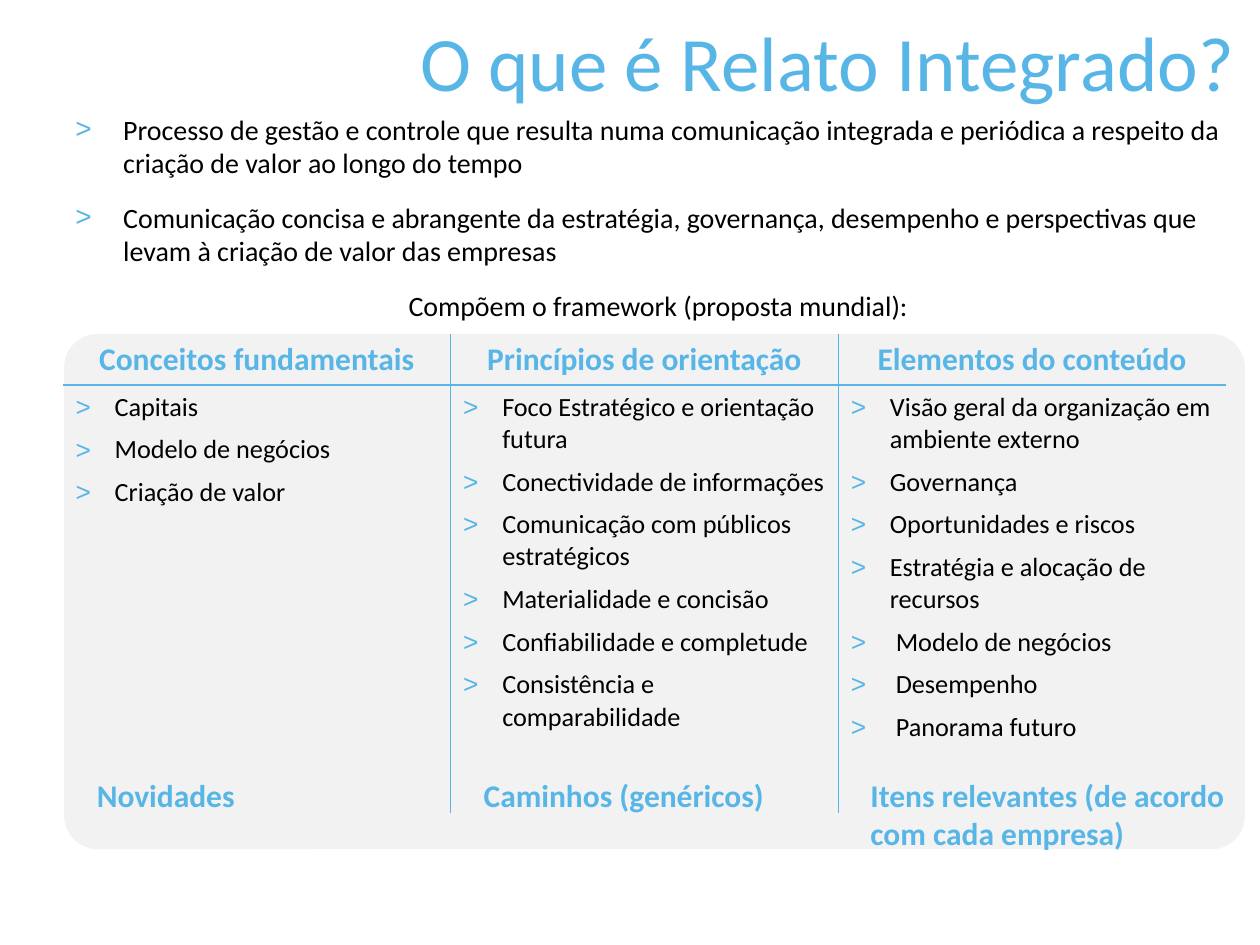
from lxml import etree
from pptx import Presentation
from pptx.dml.color import RGBColor
from pptx.enum import shapes, text
from pptx.oxml.ns import qn
from pptx.util import Inches, Pt

BLUE = RGBColor(0x58, 0xB6, 0xE7)
BLACK = RGBColor(0, 0, 0)
GREY = RGBColor(0xF2, 0xF2, 0xF2)
FONT = "Calibri"
NO_STYLE = "{2D5ABB26-0587-4C30-8999-92F81FD0307C}"

INTRO = [
    "Processo de gestão e controle que resulta numa comunicação integrada "
    "e periódica a respeito da criação de valor ao longo do tempo",
    "Comunicação concisa e abrangente da estratégia, governança, desempenho "
    "e perspectivas que levam à criação de valor das empresas",
]
CALL = "Compõem o framework (proposta mundial): "
COLUMNS = [
    ("Conceitos fundamentais",
     ["Capitais", "Modelo de negócios", "Criação de valor"]),
    ("Princípios de orientação",
     ["Foco Estratégico e orientação futura", "Conectividade de informações",
      "Comunicação com públicos estratégicos", "Materialidade e concisão",
      "Confiabilidade e completude", "Consistência e comparabilidade"]),
    ("Elementos do conteúdo",
     ["Visão geral da organização em ambiente externo", "Governança",
      "Oportunidades e riscos", "Estratégia e alocação de recursos",
      " Modelo de negócios", " Desempenho", " Panorama futuro"]),
]
# Text, left offset within the table, width, wrap
NOTES = [
    ("Novidades", 0.17, 2.76, True),
    ("Caminhos (genéricos)", 3.24, 2.44, False),
    ("Itens relevantes (de acordo com cada empresa)", 6.31, 3.19, True),
]


def style(para, size, color, bold=False):
    font = para.font
    font.name, font.size, font.bold = FONT, Pt(size), bold
    font.color.rgb = color


def hang(para, indent, mark=None):
    """Give the paragraph a hanging indent and, if asked, a blue bullet."""
    props = para._p.get_or_add_pPr()
    props.set("marL", str(Inches(indent)))
    props.set("indent", str(-Inches(indent)))
    if mark:
        tint = etree.SubElement(props, qn("a:buClr"))
        etree.SubElement(tint, qn("a:srgbClr"), val=str(BLUE))
        etree.SubElement(props, qn("a:buFont"), typeface="Arial")
        etree.SubElement(props, qn("a:buChar"), char=mark)
    else:
        etree.SubElement(props, qn("a:buNone"))


def add_lines(frame, lines):
    """Yield one paragraph for each line of text."""
    for num, line in enumerate(lines):
        para = frame.add_paragraph() if num else frame.paragraphs[0]
        para.text = line
        yield para


def rule(cell, sides):
    """Draw blue borders on the given sides, in the order L, R, T, B."""
    props = cell._tc.get_or_add_tcPr()
    for num, side in enumerate(sides):
        line = etree.Element(qn("a:ln" + side), w=str(Pt(1)))
        fill = etree.SubElement(line, qn("a:solidFill"))
        etree.SubElement(fill, qn("a:srgbClr"), val=str(BLUE))
        props.insert(num, line)


def add_title(slide, left, top, width, height):
    title = slide.shapes.title
    title.left, title.top, title.width, title.height = left, top, width, height
    frame = title.text_frame
    frame.text = "O que é Relato Integrado?"
    frame.vertical_anchor = text.MSO_ANCHOR.MIDDLE
    para = frame.paragraphs[0]
    para.alignment = text.PP_ALIGN.RIGHT
    style(para, 44, BLUE)


def add_intro(slide, left, top, width, height):
    frame = slide.shapes.add_textbox(left, top, width, height).text_frame
    frame.word_wrap = True
    for num, para in enumerate(add_lines(frame, INTRO + [CALL])):
        last = num == len(INTRO)
        hang(para, 0.38, None if last else ">")
        if num:
            para.space_before = Pt(6)
        para.space_after = Pt(6)
        para.alignment = text.PP_ALIGN.CENTER if last else text.PP_ALIGN.LEFT
        style(para, 16, BLACK)


def add_panel(slide, left, top, width, height):
    panel = slide.shapes.add_shape(
        shapes.MSO_SHAPE.ROUNDED_RECTANGLE, left, top, width, height)
    panel.adjustments[0] = 0.065
    panel.shadow.inherit = False
    panel.fill.solid()
    panel.fill.fore_color.rgb = GREY
    panel.line.fill.background()


def add_grid(slide, left, top, width, height):
    count = len(COLUMNS)
    table = slide.shapes.add_table(2, count, left, top, width, height).table
    table.first_row = table.horz_banding = False
    table._tbl.tblPr.find(qn("a:tableStyleId")).text = NO_STYLE
    table.rows[0].height = Inches(0.4)
    table.rows[1].height = height - Inches(0.4)
    for col, (name, items) in enumerate(COLUMNS):
        sides = ("L" if col else "") + ("R" if col < count - 1 else "")
        head, body = table.cell(0, col), table.cell(1, col)
        for cell, edge in ((head, "B"), (body, "T")):
            cell.fill.background()
            rule(cell, sides + edge)
        head.vertical_anchor = text.MSO_ANCHOR.MIDDLE
        for para in add_lines(head.text_frame, [name]):
            para.alignment = text.PP_ALIGN.CENTER
            style(para, 18, BLUE, True)
        for para in add_lines(body.text_frame, items):
            hang(para, 0.31, ">")
            para.space_after = Pt(6)
            style(para, 15, BLACK)


def add_notes(slide, left, top):
    for note, shift, width, wrap in NOTES:
        box = slide.shapes.add_textbox(
            left + Inches(shift), top, Inches(width), Inches(0.4))
        frame = box.text_frame
        frame.word_wrap = wrap
        frame.auto_size = text.MSO_AUTO_SIZE.SHAPE_TO_FIT_TEXT
        for para in add_lines(frame, [note]):
            style(para, 18, BLUE, True)


def main():
    deck = Presentation()
    deck.slide_width, deck.slide_height = Inches(10), Inches(7.5)
    slide = deck.slides.add_slide(deck.slide_layouts[5])
    left, top = Inches(0.5), Inches(2.65)
    add_panel(slide, Inches(0.51), top, Inches(9.37), Inches(4.09))
    add_grid(slide, left, top, Inches(9.23), Inches(3.8))
    add_intro(slide, left, Inches(0.84), Inches(9.5), Inches(4.95))
    add_title(slide, Inches(0.9), Inches(0.05), Inches(9), Inches(0.87))
    add_notes(slide, left, Inches(6.11))
    deck.save("out.pptx")


if __name__ == "__main__":
    main()
